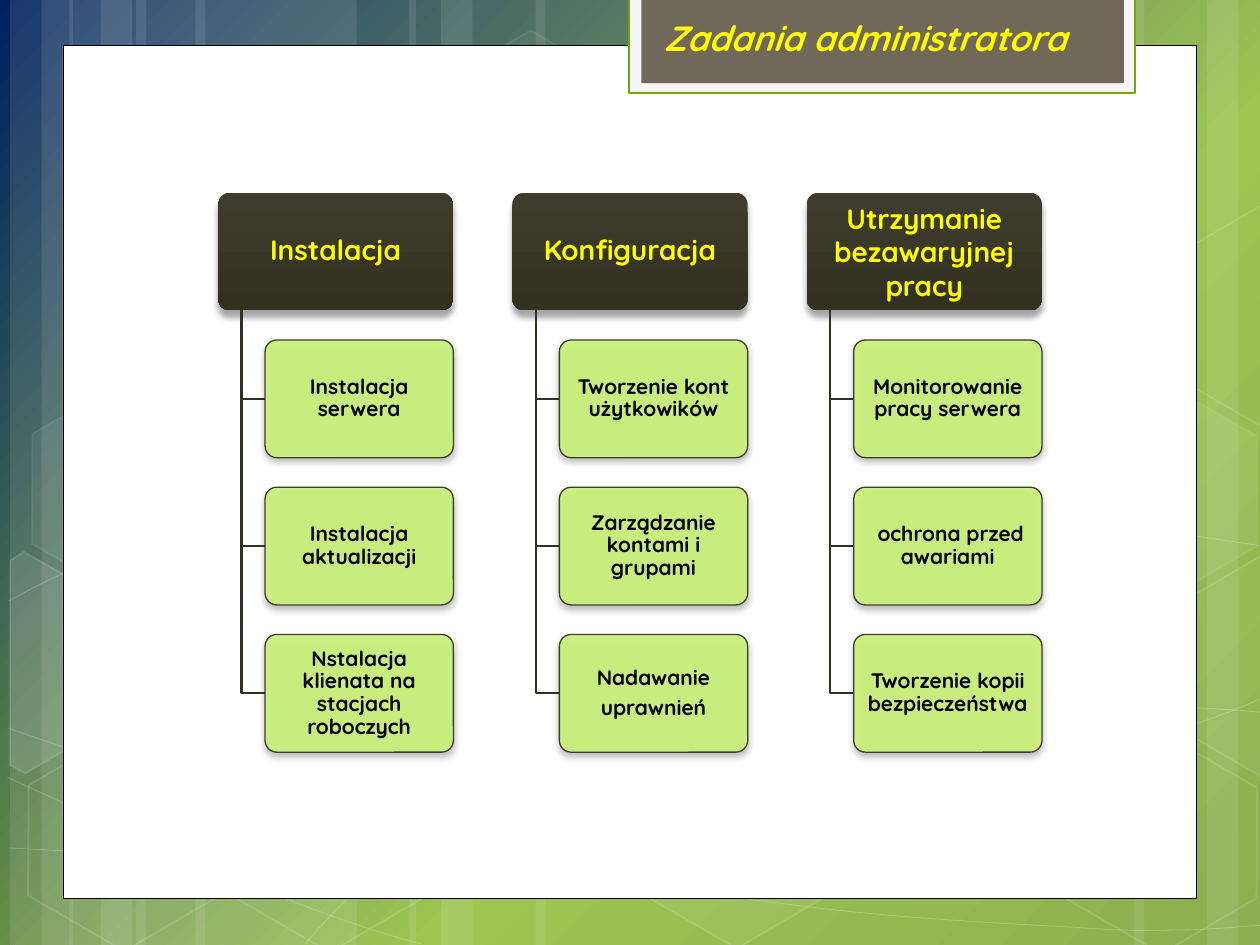
from collections import namedtuple
from dataclasses import dataclass

from lxml import etree
from pptx import Presentation
from pptx import util as u
from pptx.dml.color import RGBColor
from pptx.enum import shapes, text
from pptx.oxml.ns import qn

Box = namedtuple("Box", "left top width height")
KIND = shapes.MSO_SHAPE


@dataclass(frozen=True)
class Theme:
    font: str = "Quicksand"
    title_size: int = 20
    header_size: int = 16
    card_size: int = 12
    white: str = "FFFFFF"
    black: str = "000000"
    yellow: str = "FFFF00"
    tab_frame: str = "F5F5F5"
    tab_line: str = "74A510"
    tab: str = "71685A"
    dark: str = "3E3D2D"
    spine: str = "323124"
    card: str = "CAF278"
    backdrop: tuple = ((0, "002060"), (62, "93BF3F"), (100, "81A53E"))
    header: tuple = ((0, "3E3D2D"), (100, "333222"))


THEME = Theme()

# left, width
STRIPES = [(1.08, 1.75), (0.08, 0.5), (0.33, 0.83), (1.55, 1.75), (0.55, 0.5), (0.8, 0.83),
           (7.33, 1.75), (9.58, 0.5), (9, 0.83), (4.25, 3.08), (3.25, 0.5), (3.5, 0.83)]

# start point, then segments: two control points and an end point, or an end point alone
WAVES = [
    [(0.07, 6.73), (0.61, 6.76, 1.15, 6.79, 1.9, 6.78), (2.65, 6.77, 3.58, 6.75, 4.58, 6.65),
     (5.58, 6.55, 7, 6.36, 7.92, 6.17), (8.83, 5.98, 9.77, 5.68, 10.07, 5.51)],
    [(0.07, 4.77), (0.36, 4.61, 0.65, 4.46, 1.21, 4.31), (1.78, 4.16, 2.59, 3.94, 3.47, 3.87),
     (4.36, 3.8, 5.44, 3.79, 6.54, 3.87), (7.64, 3.95, 9.47, 4.26, 10.07, 4.34)],
    [(0.06, 6.17), (1.27, 6.72, 2.47, 7.27, 3.34, 7.49)],
    [(0.07, 5.78), (0.38, 5.89, 0.7, 6, 1.28, 6.16), (1.86, 6.31, 2.73, 6.56, 3.57, 6.73),
     (4.4, 6.9, 5.45, 7.08, 6.28, 7.18), (7.11, 7.29, 8, 7.33, 8.53, 7.36),
     (9.05, 7.4, 9.19, 7.38, 9.45, 7.38), (9.71, 7.37, 9.89, 7.35, 10.07, 7.34)],
    [(2.42, 7.49), (2.6, 7.29, 2.78, 7.09, 3.02, 6.91), (3.26, 6.73, 3.6, 6.53, 3.88, 6.39),
     (4.16, 6.25, 4.33, 6.19, 4.7, 6.09), (5.06, 5.99, 5.73, 5.85, 6.08, 5.78),
     (6.44, 5.71, 6.49, 5.71, 6.8, 5.69), (7.11, 5.66, 7.6, 5.63, 7.94, 5.62),
     (8.29, 5.61, 8.86, 5.62, 8.86, 5.62), (9.53, 5.62),
     (9.71, 5.63, 9.88, 5.64, 9.97, 5.65), (10.06, 5.66, 10.03, 5.65, 10.06, 5.66)],
]

# left, top, fill opacity, line opacity
HEXAGONS = [(3.34, 0.36, 4, 8), (4.97, 5.89, 6, 12), (0.11, 5.91, 0, 12), (0.14, 3.12, 7, 8),
            (1.74, 5.92, 0, 12), (8.34, 5.93, 0, 12), (8.34, 3.14, 7, 8)]

# fill opacity, corner points
CUT_HEXAGONS = [
    (10, [(0.08, 4.45), (0.19, 4.38), (0.96, 4.82), (0.95, 5.7), (0.2, 6.14), (0.08, 6.07)]),
    (4, [(9.26, 4.85), (10.01, 4.41), (10.09, 4.46), (10.09, 6.13), (10.02, 6.17), (9.26, 5.73)]),
    (0, [(9.26, 2.07), (10.01, 1.63), (10.1, 1.68), (10.09, 3.35), (10.02, 3.39), (9.26, 2.95)]),
]

TASKS = [
    ("Instalacja", ["Instalacja serwera", "Instalacja aktualizacji",
                    "Nstalacja klienata na stacjach roboczych"]),
    ("Konfiguracja", ["Tworzenie kont użytkowików", "Zarządzanie kontami i grupami",
                      "Nadawanie\nuprawnień"]),
    ("Utrzymanie bezawaryjnej pracy", ["Monitorowanie pracy serwera", " ochrona przed awariami",
                                       "Tworzenie kopii bezpieczeństwa"]),
]


def rgb(color):
    return RGBColor.from_string(color)


def set_alpha(parent, percent):
    color = parent.find(qn("a:solidFill")).find(qn("a:srgbClr"))
    etree.SubElement(color, qn("a:alpha"), val=str(percent * 1000))


def paint(shape, fill=None, opacity=100, line=None, width=1, line_opacity=100):
    """Set fill and line, and drop the default shadow."""
    shape.shadow.inherit = False
    properties = shape.element.spPr
    if fill and opacity:
        shape.fill.solid()
        shape.fill.fore_color.rgb = rgb(fill)
        set_alpha(properties, opacity)
    else:
        shape.fill.background()
    if line:
        shape.line.color.rgb = rgb(line)
        shape.line.width = u.Pt(width)
        set_alpha(properties.find(qn("a:ln")), line_opacity)
    else:
        shape.line.fill.background()


def paint_gradient(fill, element, stops, clockwise):
    fill.gradient()
    fill.gradient_angle = 360 - clockwise
    stop_list = next(element.iter(qn("a:gsLst")))
    stop_list.clear()
    for position, color in stops:
        stop = etree.SubElement(stop_list, qn("a:gs"), pos=str(position * 1000))
        etree.SubElement(stop, qn("a:srgbClr"), val=color)


def drop_shadow(shape, opacity, blur, distance):
    effects = shape.element.spPr.find(qn("a:effectLst"))
    shadow = etree.SubElement(effects, qn("a:outerShdw"), blurRad=str(u.Pt(blur)),
                              dist=str(u.Pt(distance)), dir="5400000", rotWithShape="0")
    color = etree.SubElement(shadow, qn("a:srgbClr"), val=THEME.black)
    etree.SubElement(color, qn("a:alpha"), val=str(opacity * 1000))


def add_box(slide, kind, box):
    return slide.shapes.add_shape(kind, *map(u.Inches, box))


def add_outline(slide, points, close=False):
    start, *rest = [(u.Inches(x), u.Inches(y)) for x, y in points]
    builder = slide.shapes.build_freeform(*start)
    builder.add_line_segments(rest, close=close)
    return builder.convert_to_shape()


def add_wave(slide, wave):
    """Draw the end points as an outline, then bend its segments into Bézier curves."""
    shape = add_outline(slide, [segment[-2:] for segment in wave])
    lines = list(shape.element.iter(qn("a:lnTo")))
    for line, segment in zip(lines, wave[1:]):
        controls = [segment[i:i + 2] for i in range(0, len(segment) - 2, 2)]
        if controls:
            line.tag = qn("a:cubicBezTo")
        for index, (x, y) in enumerate(controls):
            point = etree.Element(qn("a:pt"), x=str(u.Inches(x) - shape.left),
                                  y=str(u.Inches(y) - shape.top))
            line.insert(index, point)
    return shape


def write(shape, words, size, color, italic=False):
    shape.text_frame.text = words
    shape.text_frame.word_wrap = True
    for paragraph in shape.text_frame.paragraphs:
        for run in paragraph.runs:
            font = run.font
            font.name, font.size, font.bold, font.italic = THEME.font, u.Pt(size), True, italic
            font.color.rgb = rgb(color)


def write_card(shape, words, size, color, line_spacing=0.9):
    write(shape, words, size, color)
    frame = shape.text_frame
    frame.vertical_anchor = text.MSO_ANCHOR.MIDDLE
    frame.margin_left = frame.margin_right = u.Inches(0.06)
    frame.margin_top = frame.margin_bottom = u.Inches(0.05)
    for paragraph in frame.paragraphs:
        paragraph.alignment = text.PP_ALIGN.CENTER
        paragraph.line_spacing = line_spacing
    for paragraph in frame.paragraphs[:-1]:
        paragraph.space_after = u.Pt(size * 0.35)


def add_backdrop(slide, box):
    paint_gradient(slide.background.fill, slide.element, THEME.backdrop, 45)
    for left, width in STRIPES:
        stripe = add_box(slide, KIND.RECTANGLE, (box.left + left, box.top, width, box.height))
        paint(stripe, THEME.white, 10)
    for wave in WAVES:
        paint(add_wave(slide, wave), line=THEME.white, width=0.5, line_opacity=20)
    for left, top, opacity, line_opacity in HEXAGONS:
        hexagon = add_box(slide, KIND.HEXAGON, (box.left + left, box.top + top, 1.75, 1.52))
        hexagon.adjustments[0] = 0.285
        hexagon.rotation = 30
        paint(hexagon, THEME.white, opacity, THEME.white, 1, line_opacity)
    for opacity, corners in CUT_HEXAGONS:
        paint(add_outline(slide, corners, close=True), THEME.white, opacity, THEME.white, 1, 12)


def add_title_tab(slide, box):
    paint(add_box(slide, KIND.RECTANGLE, box), THEME.tab_frame, line=THEME.tab_line, width=1.25)
    inner = Box(box.left + 0.1, box.top, box.width - 0.19, box.height - 0.08)
    paint(add_box(slide, KIND.RECTANGLE, inner), THEME.tab)
    title = slide.shapes.add_textbox(*map(u.Inches, (box.left + 0.18, box.top + 0.1, 3.45, 0.44)))
    write(title, "Zadania administratora", THEME.title_size, THEME.yellow, italic=True)


def add_task_column(slide, box, header, tasks):
    """Header on top, with indented cards hung from a line below it."""
    row_height = box.height / (1 + 1.25 * len(tasks))
    card_left, spine_x = box.left + 0.2 * box.width, box.left + 0.1 * box.width
    head = add_box(slide, KIND.ROUNDED_RECTANGLE, (box.left, box.top, box.width, row_height))
    head.adjustments[0] = 0.1
    paint(head)
    paint_gradient(head.fill, head.element, THEME.header, 90)
    drop_shadow(head, 34, 3.5, 4)
    write_card(head, header, THEME.header_size, THEME.yellow, 1 if " " in header else 0.9)
    for row, task in enumerate(tasks, 1):
        top = box.top + row * 1.25 * row_height
        middle = top + row_height / 2
        branch = [(spine_x, box.top + row_height), (spine_x, middle), (card_left, middle)]
        paint(add_outline(slide, branch), line=THEME.spine, width=1.25)
        card = add_box(slide, KIND.ROUNDED_RECTANGLE, (card_left, top, 0.8 * box.width, row_height))
        card.adjustments[0] = 0.1
        paint(card, THEME.card, 90, THEME.dark, 0.75)
        drop_shadow(card, 28, 4, 2)
        write_card(card, task, THEME.card_size, THEME.black)


def add_task_chart(slide, box):
    width = box.width / (1.25 * len(TASKS) - 0.25)
    for column, (header, tasks) in enumerate(TASKS):
        left = box.left + column * 1.25 * width
        add_task_column(slide, Box(left, box.top, width, box.height), header, tasks)


def main():
    presentation = Presentation()
    presentation.slide_width, presentation.slide_height = u.Inches(10), u.Inches(7.5)
    slide = presentation.slides.add_slide(presentation.slide_layouts[6])
    add_backdrop(slide, Box(0, 0, 10, 7.5))
    page = add_box(slide, KIND.RECTANGLE, (0.5, 0.36, 9, 6.77))
    paint(page, THEME.white, line=THEME.black, width=0.5)
    add_title_tab(slide, Box(4.99, -0.02, 4.02, 0.76))
    add_task_chart(slide, Box(1.73, 1.53, 6.54, 4.44))
    presentation.save("out.pptx")


if __name__ == "__main__":
    main()
